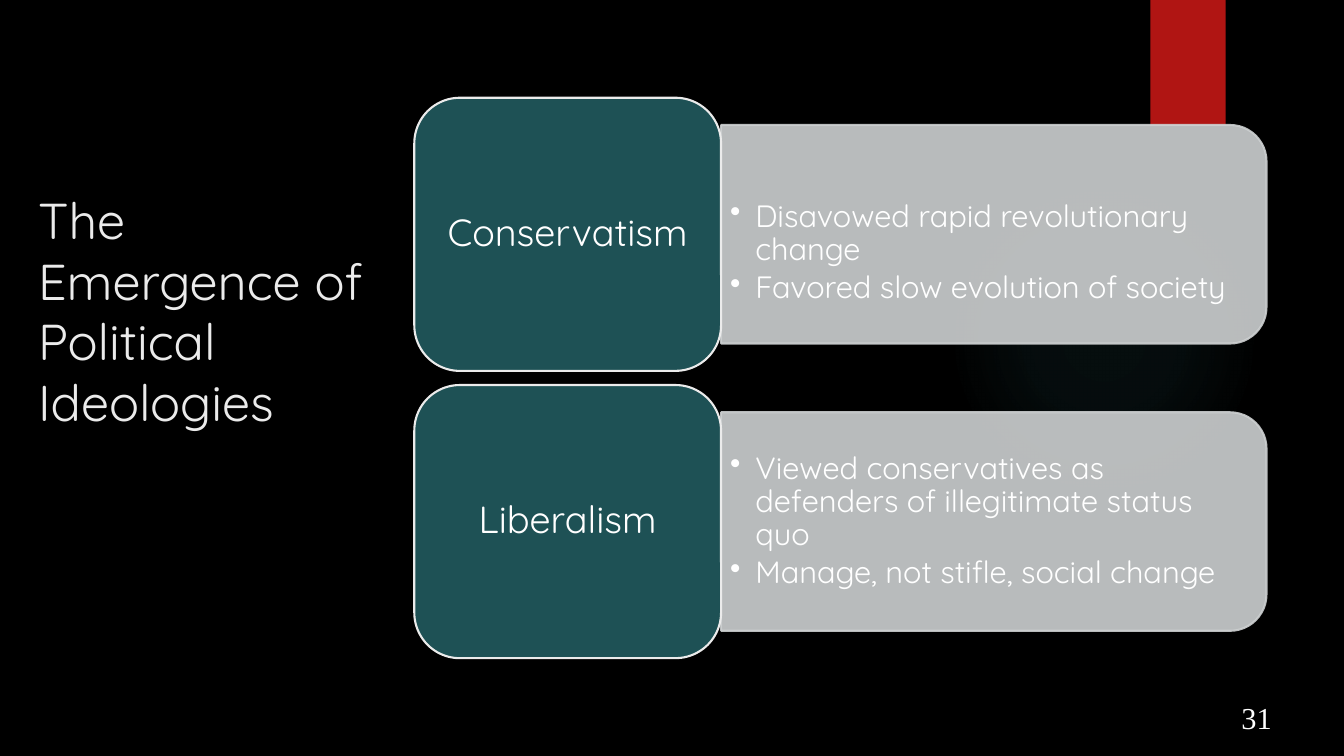
from lxml import etree
from pptx import Presentation, util as u
from pptx.dml.color import RGBColor
from pptx.enum import shapes, text
from pptx.oxml.ns import qn

WIDTH, HEIGHT = u.Inches(13.33), u.Inches(7.5)
FONT = "Quicksand"
WHITE, PALE, PANEL, TEAL, RED, GLOW = "FFFFFF", "EBEBEB", "CDD0D1", "1E5155", "B01513", "50B9C1"
IDEOLOGIES = [
    ("Conservatism", 0.37, ["Disavowed rapid revolutionary change",
                            "Favored slow evolution of society"]),
    ("Liberalism", 0, ["Viewed conservatives as defenders of illegitimate status quo",
                       "Manage, not stifle, social change"]),
]


def percent_box(left, top, width, height):
    """Turn percentages of the slide into a box of lengths."""
    return tuple(int(share * size / 100) for share, size in
                 zip((left, top, width, height), (WIDTH, HEIGHT) * 2))


def paint(color_format, hex_color):
    """Set a colour from a hex string."""
    color_format.rgb = RGBColor.from_string(hex_color)


def set_alpha(properties, percent):
    """Make every colour under the given element partly transparent."""
    for color in properties.iter(qn("a:srgbClr")):
        etree.SubElement(color, qn("a:alpha")).set("val", str(percent * 1000))


def add_block(slide, kind, box, fill, outline=None):
    """Add a flat preset shape with an optional outline."""
    block = slide.shapes.add_shape(kind, *box)
    block.shadow.inherit = False
    block.fill.solid()
    paint(block.fill.fore_color, fill)
    if outline:
        paint(block.line.color, outline)
        block.line.width = u.Pt(1.5)
    else:
        block.line.fill.background()
    return block


def prepare_frame(shape, anchor, side=0.1, top=0.05, bottom=0.05):
    """Set wrapping, anchor and insets, and return the text frame."""
    frame = shape.text_frame
    frame.word_wrap = True
    frame.vertical_anchor = anchor
    frame.margin_left = frame.margin_right = u.Inches(side)
    frame.margin_top, frame.margin_bottom = u.Inches(top), u.Inches(bottom)
    return frame


def write(paragraph, words, size, color=WHITE, font=FONT, align=text.PP_ALIGN.LEFT):
    """Add one styled run to a paragraph."""
    paragraph.alignment = align
    run = paragraph.add_run()
    run.text = words
    run.font.size, run.font.name = u.Pt(size), font
    paint(run.font.color, color)


def add_backdrop(slide, glow_box, ribbon_box):
    """Draw the black ground, the faint glow and the red ribbon."""
    slide.background.fill.solid()
    paint(slide.background.fill.fore_color, "000000")
    glow = add_block(slide, shapes.MSO_SHAPE.OVAL, glow_box, GLOW)
    properties = glow._element.spPr
    solid = properties.find(qn("a:solidFill"))
    gradient = etree.Element(qn("a:gradFill"), rotWithShape="1")
    stops = etree.SubElement(gradient, qn("a:gsLst"))
    for position, alpha in ((0, 7), (36, 6), (69, 0)):
        stop = etree.SubElement(stops, qn("a:gs"), pos=str(position * 1000))
        etree.SubElement(stop, qn("a:srgbClr"), val=GLOW)
        set_alpha(stop, alpha)
    circle = etree.SubElement(gradient, qn("a:path"), path="circle")
    etree.SubElement(circle, qn("a:fillToRect"), l="50000", t="50000", r="50000", b="50000")
    properties.replace(solid, gradient)
    add_block(slide, shapes.MSO_SHAPE.RECTANGLE, ribbon_box, RED)


def add_title(slide, box):
    """Write the slide title."""
    frame = prepare_frame(slide.shapes.add_textbox(*box), text.MSO_ANCHOR.TOP)
    write(frame.paragraphs[0], "The Emergence of Political Ideologies", 36, PALE)


def add_bullets(slide, box, points, lead):
    """Write the bulleted points, lowered by a lead in inches."""
    frame = prepare_frame(slide.shapes.add_textbox(*box), text.MSO_ANCHOR.MIDDLE,
                          side=0.09, top=0.05 + lead)
    for index, point in enumerate(points):
        paragraph = frame.paragraphs[0] if index == 0 else frame.add_paragraph()
        properties = paragraph._p.get_or_add_pPr()
        properties.set("marL", str(u.Inches(0.25)))
        properties.set("indent", str(-u.Inches(0.25)))
        etree.SubElement(properties, qn("a:buChar"), char="•")
        paragraph.line_spacing, paragraph.space_after = 0.9, u.Pt(3.5)
        write(paragraph, point, 22)


def add_ideology(slide, box, label, lead, points):
    """Draw one row: a label tile and the panel of points beside it."""
    left, top, width, height = box
    tile_width, panel_width, panel_height = (
        int(width * 0.36), int(width * 0.64), int(height * 0.8))
    panel_left, middle = left + tile_width, top + height // 2
    upright = (panel_left + (panel_width - panel_height) // 2, middle - panel_width // 2,
               panel_height, panel_width)
    panel = add_block(slide, shapes.MSO_SHAPE.ROUND_2_SAME_RECTANGLE, upright, PANEL, PANEL)
    panel.rotation = 90
    set_alpha(panel._element.spPr, 90)
    text_height = int(panel_height * 0.9)
    add_bullets(slide, (panel_left, middle - text_height // 2,
                        int(panel_width * 0.98), text_height), points, lead)
    tile = add_block(slide, shapes.MSO_SHAPE.ROUNDED_RECTANGLE,
                     (left, top, tile_width, height), TEAL, PALE)
    frame = prepare_frame(tile, text.MSO_ANCHOR.MIDDLE, side=0.11, top=0.06, bottom=0.06)
    frame.paragraphs[0].line_spacing = 0.9
    write(frame.paragraphs[0], label, 27, align=text.PP_ALIGN.CENTER)


def add_page_number(slide, box):
    """Write the page number."""
    frame = prepare_frame(slide.shapes.add_textbox(*box), text.MSO_ANCHOR.BOTTOM)
    write(frame.paragraphs[0], "31", 21.7, font="Times New Roman", align=text.PP_ALIGN.CENTER)


def main():
    """Build and save the slide."""
    deck = Presentation()
    deck.slide_width, deck.slide_height = WIDTH, HEIGHT
    slide = deck.slides.add_slide(deck.slide_layouts[6])
    add_backdrop(slide, percent_box(70.6, 24.4, 23.1, 41.07), percent_box(85.6, 0, 5.6, 16.67))
    add_title(slide, percent_box(2.1, 24.4, 25.6, 59))
    for row, ideology in enumerate(IDEOLOGIES):
        add_ideology(slide, percent_box(30.83, 12.93 + 38 * row, 63.4, 36.13), *ideology)
    add_page_number(slide, percent_box(87.25, 92.67, 12.5, 5.33))
    deck.save("out.pptx")


if __name__ == "__main__":
    main()
